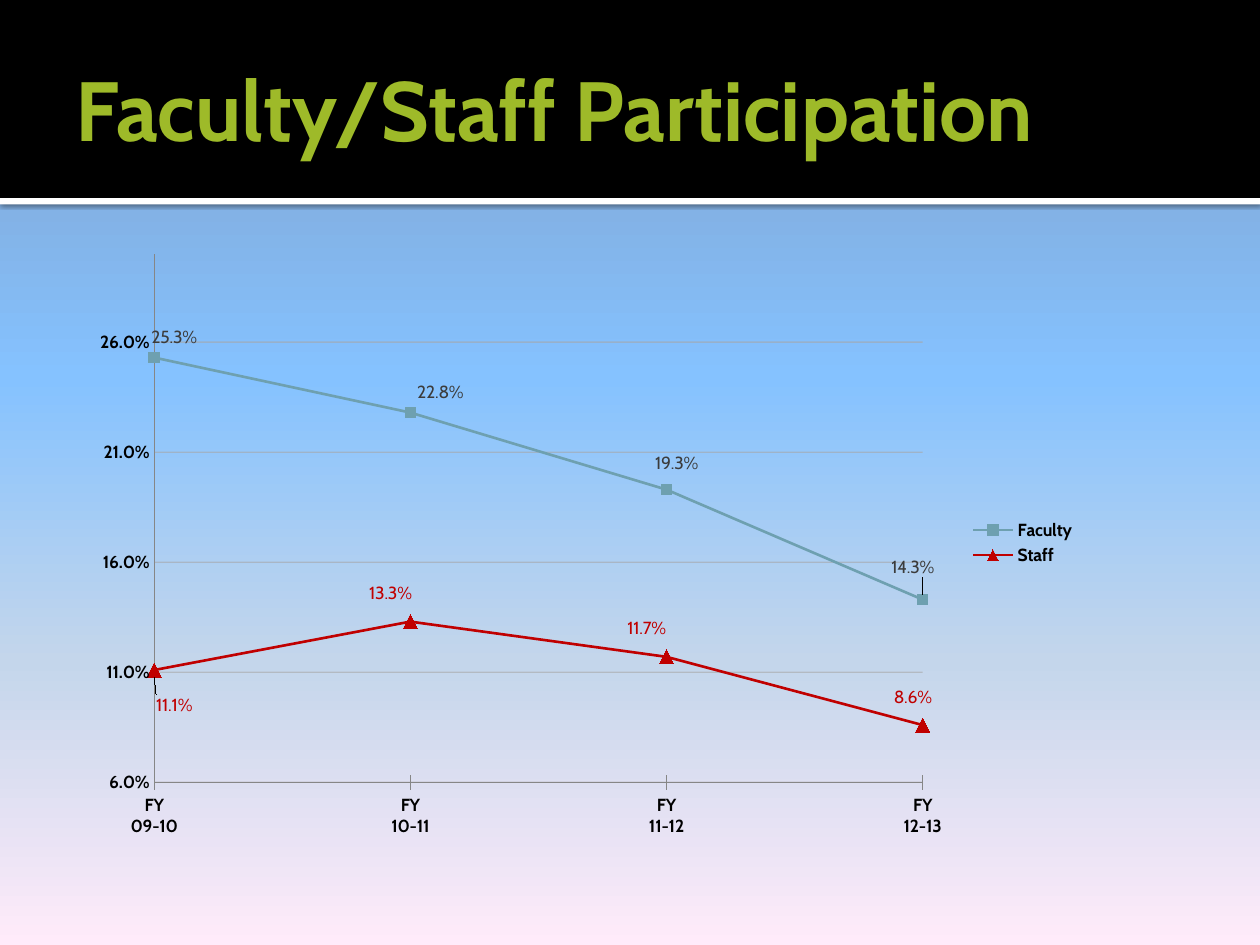
from lxml.etree import SubElement
from pptx import Presentation
from pptx.chart.data import CategoryChartData
from pptx.dml.color import RGBColor
from pptx.enum.chart import (XL_CHART_TYPE, XL_LABEL_POSITION, XL_LEGEND_POSITION,
                             XL_MARKER_STYLE, XL_TICK_MARK)
from pptx.enum.shapes import MSO_SHAPE
from pptx.enum.text import MSO_ANCHOR, PP_ALIGN
from pptx.oxml import parse_xml
from pptx.oxml.ns import nsdecls, qn
from pptx.util import Cm, Pt

FONT = "Cabin"
BLACK = RGBColor(0x00, 0x00, 0x00)
WHITE = RGBColor(0xFF, 0xFF, 0xFF)
LIME = RGBColor(0x9E, 0xBA, 0x29)
TEAL = RGBColor(0x6E, 0xA0, 0xB0)
RED = RGBColor(0xC0, 0x00, 0x00)
CHARCOAL = RGBColor(0x3B, 0x3B, 0x3B)
AXIS_GREY = RGBColor(0x86, 0x86, 0x86)
GRID_GREY = RGBColor(0xA6, 0xA6, 0xA6)

TITLE = "Faculty/Staff Participation"
SKY = [(0, "809DC4"), (40, "85C2FF"), (70, "C4D6EB"), (100, "FFEBFA")]
YEARS = ["FY\n09-10", "FY\n10-11", "FY\n11-12", "FY\n12-13"]
ABOVE, BELOW = XL_LABEL_POSITION.ABOVE, XL_LABEL_POSITION.BELOW
# Each label: position and its shift as a fraction of the chart's width and height
SERIES = [
    {"name": "Faculty", "values": [0.253, 0.228, 0.193, 0.143],
     "color": TEAL, "label_color": CHARCOAL, "marker": XL_MARKER_STYLE.SQUARE, "size": 6,
     "labels": [(ABOVE, 0.02, 0), (ABOVE, 0.03, 0),
                (ABOVE, 0.01, -0.01), (ABOVE, -0.01, -0.02)]},
    {"name": "Staff", "values": [0.111, 0.133, 0.117, 0.086],
     "color": RED, "label_color": RED, "marker": XL_MARKER_STYLE.TRIANGLE, "size": 8,
     "labels": [(BELOW, 0.02, 0.02), (ABOVE, -0.02, -0.01),
                (ABOVE, -0.02, -0.01), (ABOVE, -0.01, -0.01)]},
]
PLOT = {"x": 0.07, "y": 0.02, "w": 0.77, "h": 0.87}
LEGEND = {"x": 0.88, "y": 0.45, "w": 0.12, "h": 0.09}
HEADER_HEIGHT = 3.99


def style_font(font, color, size=10, bold=False):
    font.name, font.size, font.bold = FONT, Pt(size), bold
    font.color.rgb = color


def manual_layout(modes, fractions):
    layout = parse_xml(f"<c:layout {nsdecls('c')}><c:manualLayout/></c:layout>")
    for tag, value in [*modes.items(), *fractions.items()]:
        SubElement(layout[0], qn(f"c:{tag}"), val=str(value))
    return layout


def place_part(element, fractions, after=None, inner=False):
    """Fix the place of the plot area or the legend within the chart."""
    for old in element.findall(qn("c:layout")):
        element.remove(old)
    modes = {"layoutTarget": "inner"} if inner else {}
    layout = manual_layout({**modes, "xMode": "edge", "yMode": "edge"}, fractions)
    if after is None:
        element.insert(0, layout)
    else:
        after.addnext(layout)


def paint_background(slide):
    fill = slide.background.fill
    fill.gradient()
    fill.gradient_angle = 270
    stops = slide.background._cSld.find(".//" + qn("a:gsLst"))
    for stop in list(stops):
        stops.remove(stop)
    for percent, color in SKY:
        stop = SubElement(stops, qn("a:gs"), pos=str(percent * 1000))
        SubElement(stop, qn("a:srgbClr"), val=color)


def add_band(slide, top, height, color):
    band = slide.shapes.add_shape(MSO_SHAPE.RECTANGLE, 0, Cm(top), Cm(25.4), Cm(height))
    band.shadow.inherit = False
    band.fill.solid()
    band.fill.fore_color.rgb = color
    band.line.fill.background()
    return band


def add_header(slide):
    rule = add_band(slide, HEADER_HEIGHT, 0.13, WHITE)
    effects = rule._element.spPr.find(qn("a:effectLst"))
    shadow = SubElement(effects, qn("a:outerShdw"), blurRad=str(Pt(2.5)),
                        dist=str(Pt(0.8)), dir="5400000", rotWithShape="0")
    shadow_color = SubElement(shadow, qn("a:srgbClr"), val="000000")
    SubElement(shadow_color, qn("a:alpha"), val="60000")
    add_band(slide, 0, HEADER_HEIGHT, BLACK)

    title = slide.shapes.title
    slide.shapes._spTree.append(title._element)
    title.left, title.top, title.width, title.height = Cm(1.27), Cm(0.43), Cm(22.86), Cm(3.48)
    frame = title.text_frame
    frame.vertical_anchor = MSO_ANCHOR.MIDDLE
    frame.margin_left = Cm(0.25)
    frame.margin_top = frame.margin_right = frame.margin_bottom = Cm(0.13)
    paragraph = frame.paragraphs[0]
    paragraph.alignment = PP_ALIGN.LEFT
    run = paragraph.add_run()
    run.text = TITLE
    style_font(run.font, LIME, 48, True)


def format_axes(chart):
    years, rates = chart.category_axis, chart.value_axis
    for axis in (years, rates):
        style_font(axis.tick_labels.font, BLACK, bold=True)
        axis.format.line.color.rgb = AXIS_GREY
        axis.format.line.width = Pt(0.75)
        axis.minor_tick_mark = XL_TICK_MARK.NONE
    years.major_tick_mark = XL_TICK_MARK.CROSS
    rates.major_tick_mark = XL_TICK_MARK.NONE
    rates.minimum_scale, rates.maximum_scale, rates.major_unit = 0.06, 0.3, 0.05
    rates.tick_labels.number_format = "0.0%"
    rates.tick_labels.number_format_is_linked = False
    grid = rates.major_gridlines.format.line
    grid.color.rgb = GRID_GREY
    grid.width = Pt(0.75)
    grid_color = rates._element.find(qn("c:majorGridlines")).find(".//" + qn("a:srgbClr"))
    SubElement(grid_color, qn("a:alpha"), val="59000")
    # The first and last years sit on the edges of the plot
    crossing = parse_xml(f'<c:crossBetween {nsdecls("c")} val="midCat"/>')
    rates._element.find(qn("c:majorUnit")).addprevious(crossing)


def format_series(series, design):
    series.smooth = False
    series.format.line.color.rgb = design["color"]
    series.format.line.width = Pt(1.5)
    marker = series.marker
    marker.style, marker.size = design["marker"], design["size"]
    marker.format.fill.solid()
    marker.format.fill.fore_color.rgb = design["color"]
    marker.format.line.fill.background()

    labels = series.data_labels
    labels.show_value = True
    labels.number_format, labels.number_format_is_linked = "0.0%", False
    style_font(labels.font, design["label_color"])
    for index, (position, shift_x, shift_y) in enumerate(design["labels"]):
        label = series.points[index].data_label
        style_font(label.font, design["label_color"])
        label.position = position
        element = labels._element.findall(qn("c:dLbl"))[index]
        element.find(qn("c:idx")).addnext(manual_layout({}, {"x": shift_x, "y": shift_y}))


def add_participation_chart(slide):
    data = CategoryChartData(number_format="0.0%")
    data.categories = YEARS
    for design in SERIES:
        data.add_series(design["name"], design["values"])
    chart = slide.shapes.add_chart(XL_CHART_TYPE.LINE_MARKERS, Cm(1.7), Cm(4.88),
                                   Cm(20.12), Cm(12.24), data).chart
    chart.has_title = False
    style_font(chart.font, BLACK)
    chart.plots[0].vary_by_categories = False
    format_axes(chart)
    for series, design in zip(chart.plots[0].series, SERIES):
        format_series(series, design)
    chart.has_legend = True
    legend = chart.legend
    legend.position = XL_LEGEND_POSITION.RIGHT
    legend.include_in_layout = False
    style_font(legend.font, BLACK, bold=True)
    place_part(legend._element, LEGEND, after=legend._element.find(qn("c:legendPos")))
    place_part(chart._chartSpace.find(".//" + qn("c:plotArea")), PLOT, inner=True)


def main():
    presentation = Presentation()
    presentation.slide_width, presentation.slide_height = Cm(25.4), Cm(19.05)
    slide = presentation.slides.add_slide(presentation.slide_layouts[5])
    paint_background(slide)
    add_header(slide)
    add_participation_chart(slide)
    presentation.save("out.pptx")


if __name__ == "__main__":
    main()
